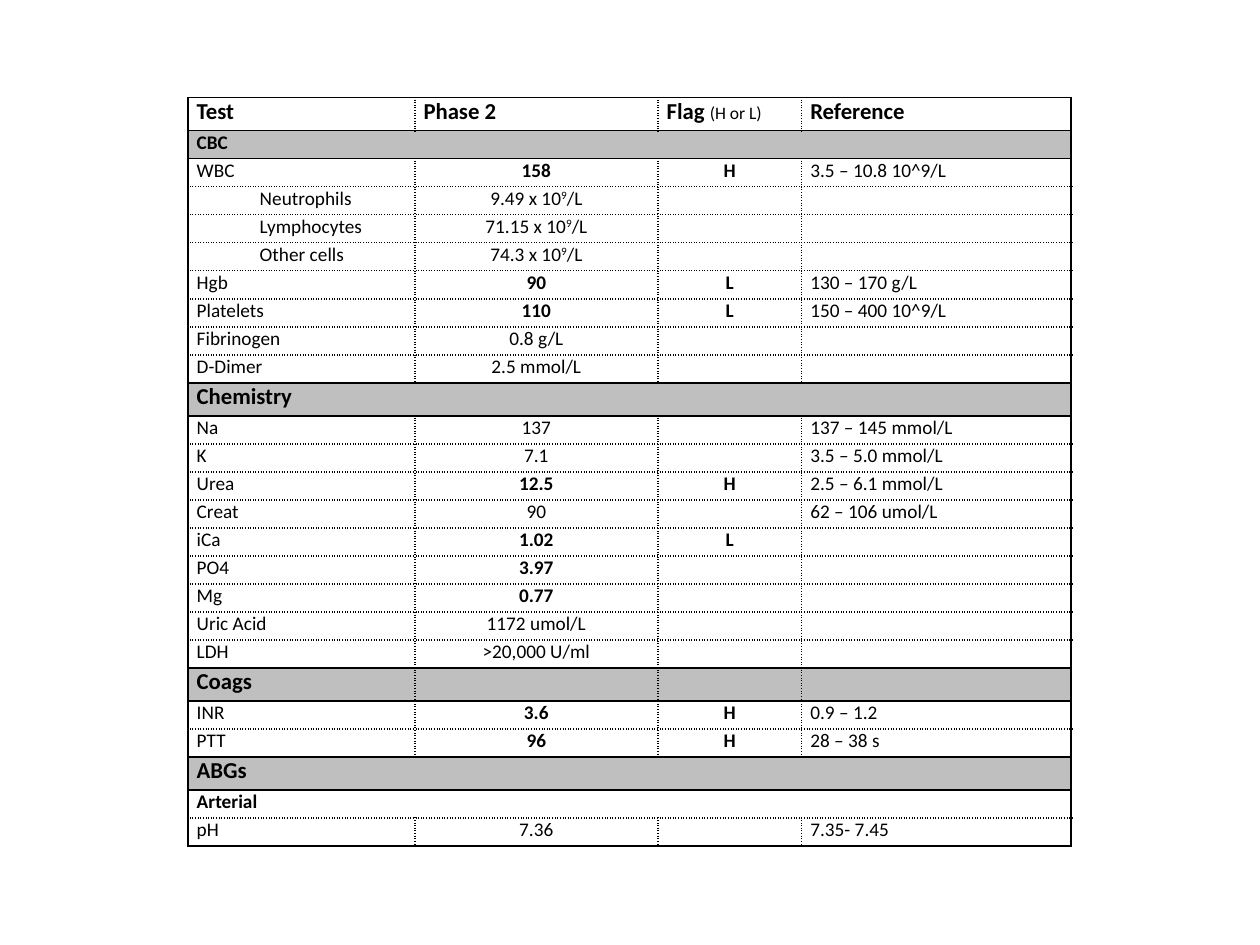
from lxml.etree import SubElement
from pptx import Presentation
from pptx.dml.color import RGBColor
from pptx.enum.text import PP_ALIGN
from pptx.oxml.ns import qn
from pptx.util import Pt

COLORS = {"ink": "000000", "band": "BFBFBF", "paper": "FFFFFF"}
COLUMNS = [129.6, 138.96, 82.08, 154.08]
HEIGHTS = {"head": 18.85, "section": 18.85, "minor": 16.04, "sub": 16.04, "data": 16.04, "indent": 16.04}
HEADINGS = ("head", "section", "minor")
FILLS = {"head": "paper", "section": "band", "minor": "band"}
ROWS = [
    ("head", "Test", "Phase 2", "Flag |(H or L)", "Reference"),
    ("minor", "CBC"),
    ("data", "WBC", "*158", "*H", "3.5 – 10.8 10^9/L"),
    ("indent", "Neutrophils", "9.49 x 10|9|/L", "", ""),
    ("indent", "Lymphocytes", "71.15 x 10|9|/L", "", ""),
    ("indent", "Other cells", "74.3 x 10|9|/L", "", ""),
    ("data", "Hgb", "*90", "*L", "130 – 170 g/L"),
    ("data", "Platelets", "*110", "*L", "150 – 400 10^9/L"),
    ("data", "Fibrinogen", "0.8 g/L", "", ""),
    ("data", "D-Dimer", "2.5 mmol/L", "", ""),
    ("section", "Chemistry"),
    ("data", "Na", "137", "", "137 – 145 mmol/L"),
    ("data", "K", "7.1", "", "3.5 – 5.0 mmol/L"),
    ("data", "Urea", "*12.5", "*H", "2.5 – 6.1 mmol/L"),
    ("data", "Creat", "90", "", "62 – 106 umol/L"),
    ("data", "iCa", "*1.02", "*L", ""),
    ("data", "PO4", "*3.97", "", ""),
    ("data", "Mg", "*0.77", "", ""),
    ("data", "Uric Acid", "1172 umol/L", "", ""),
    ("data", "LDH", ">20,000 U/ml", "", ""),
    ("section", "Coags", "", "", ""),
    ("data", "INR", "*3.6", "*H", "0.9 – 1.2"),
    ("data", "PTT", "*96", "*H", "28 – 38 s"),
    ("section", "ABGs"),
    ("sub", "Arterial"),
    ("data", "pH", "7.36", "", "7.35- 7.45"),
]


class LabSlide:
    """Holds the style and the current slide of the lab results."""

    def __init__(self, prs, font="Calibri"):
        self.s = prs.slides.add_slide(prs.slide_layouts[6])
        self.font = font

    def table(self, left, top, rows):
        n, m = len(rows), len(COLUMNS)
        heights = [HEIGHTS[row[0]] for row in rows]
        gf = self.s.shapes.add_table(n, m, Pt(left), Pt(top), Pt(sum(COLUMNS)), Pt(sum(heights)))
        tbl = gf.table
        tbl.first_row = tbl.horz_banding = False
        for col, width in zip(tbl.columns, COLUMNS):
            col.width = Pt(width)
        solid = [i in (0, n) or rows[i][0] in HEADINGS or rows[i - 1][0] in HEADINGS
                 for i in range(n + 1)]
        for i, (kind, *texts) in enumerate(rows):
            tbl.rows[i].height = Pt(heights[i])
            merged = len(texts) == 1
            if merged:
                tbl.cell(i, 0).merge(tbl.cell(i, m - 1))
            for j in range(m):
                cell = tbl.cell(i, j)
                self.text(cell, kind, j, "" if j >= len(texts) else texts[j])
                self.borders(cell, merged or j == 0, merged or j == m - 1, solid[i], solid[i + 1])
                self.fill(cell, kind)

    def text(self, cell, kind, col, text):
        cell.margin_left = cell.margin_right = Pt(5.04)
        cell.margin_top = cell.margin_bottom = 0
        size = 13 if kind in ("head", "section") else 11
        bold = kind in HEADINGS + ("sub",) or text.startswith("*")
        p = cell.text_frame.paragraphs[0]
        if kind in ("data", "indent") and col in (1, 2):
            p.alignment = PP_ALIGN.CENTER
        if kind == "indent" and col == 0:
            p._p.get_or_add_pPr().set("marL", str(Pt(36)))
        if not text:
            p._p.get_or_add_endParaRPr().set("sz", str(size * 100))
            return
        for k, part in enumerate(text.lstrip("*").split("|")):
            r = p.add_run()
            r.text = part
            r.font.name, r.font.size, r.font.bold = self.font, Pt(size), bold
            r.font.color.rgb = RGBColor.from_string(COLORS["ink"])
            if k == 1 and kind == "head":
                r.font.size, r.font.bold = Pt(10), False
            elif k == 1:
                r._r.get_or_add_rPr().set("baseline", "30000")

    def borders(self, cell, *solids):
        tc_pr = cell._tc.get_or_add_tcPr()
        for side, solid in zip("LRTB", solids):
            ln = SubElement(tc_pr, qn(f"a:ln{side}"), w=str(Pt(1)))
            fill = SubElement(ln, qn("a:solidFill"))
            SubElement(fill, qn("a:srgbClr"), val=COLORS["ink"])
            SubElement(ln, qn("a:prstDash"), val="solid" if solid else "sysDot")

    def fill(self, cell, kind):
        if kind in FILLS:
            cell.fill.solid()
            cell.fill.fore_color.rgb = RGBColor.from_string(COLORS[FILLS[kind]])
        else:
            cell.fill.background()


def main():
    prs = Presentation()
    prs.slide_width, prs.slide_height = Pt(720), Pt(540)
    LabSlide(prs).table(107.4, 55.8, ROWS)
    prs.save("out.pptx")


if __name__ == "__main__":
    main()
